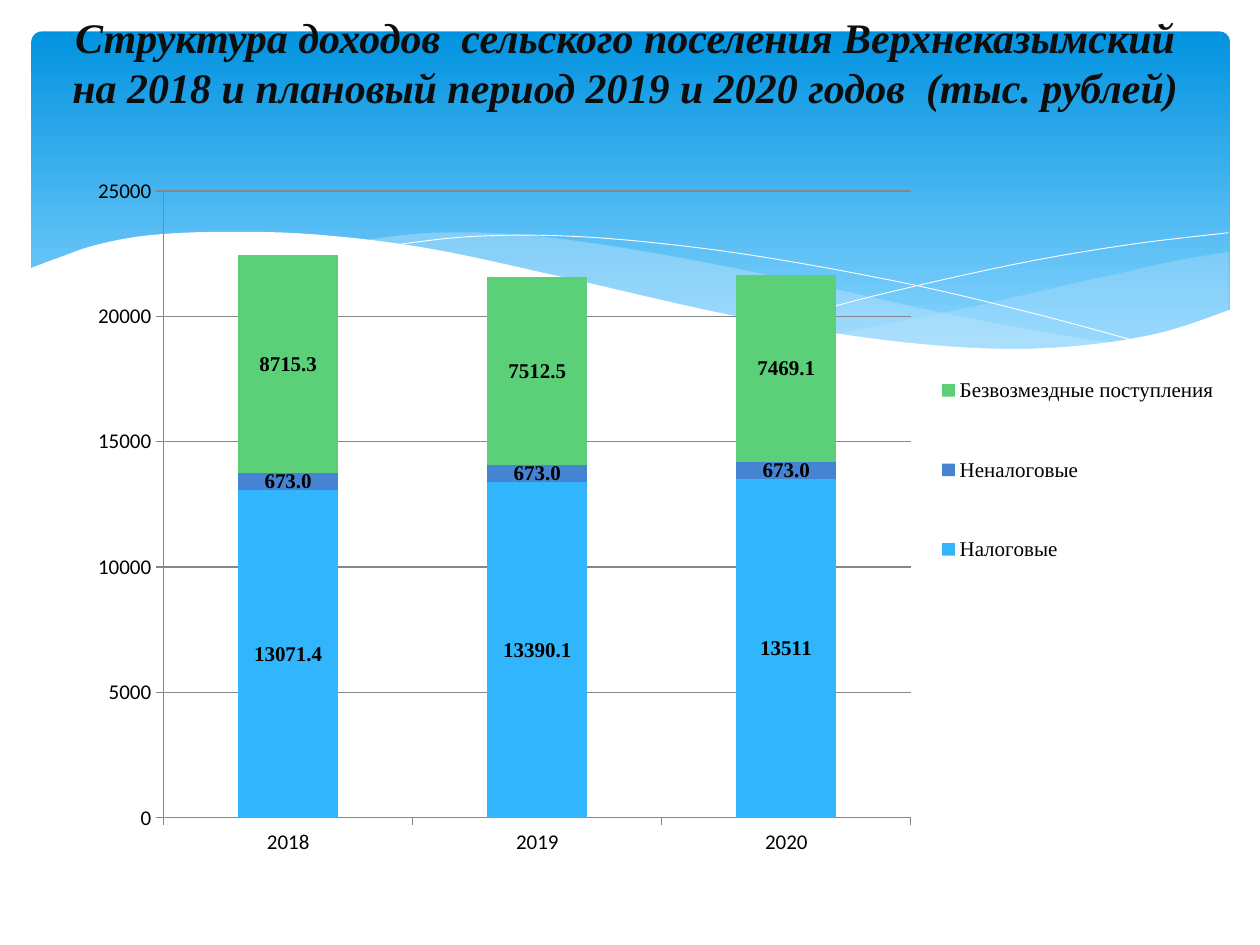
from lxml import etree
from pptx import Presentation
from pptx.chart.data import CategoryChartData
from pptx.dml.color import RGBColor
from pptx.enum.chart import XL_CHART_TYPE, XL_LEGEND_POSITION, XL_TICK_MARK
from pptx.enum.shapes import MSO_SHAPE
from pptx.enum.text import MSO_ANCHOR, MSO_AUTO_SIZE, PP_ALIGN
from pptx.oxml.ns import qn
from pptx.util import Pt

STACKED = XL_CHART_TYPE.COLUMN_STACKED
LEGEND_RIGHT = XL_LEGEND_POSITION.RIGHT
TICK_CROSS = XL_TICK_MARK.CROSS
TICK_OUTSIDE = XL_TICK_MARK.OUTSIDE
ROUNDED = MSO_SHAPE.ROUNDED_RECTANGLE
MIDDLE = MSO_ANCHOR.MIDDLE
CENTER = PP_ALIGN.CENTER
NO_AUTOSIZE = MSO_AUTO_SIZE.NONE

WHITE = RGBColor(0xFF, 0xFF, 0xFF)
BLACK = RGBColor(0, 0, 0)
TITLE_COLOR = RGBColor(0x0D, 0x0D, 0x0D)
BAND_TOP = RGBColor(0x02, 0x93, 0xE0)
BAND_BOTTOM = RGBColor(0x83, 0xD3, 0xFE)
WAVE_BLUE = RGBColor(0xC6, 0xE7, 0xFC)
GRID_GRAY = RGBColor(0x86, 0x86, 0x86)
SERIF, SANS = "Times New Roman", "Calibri"

# Content
TITLE = ("Структура доходов  сельского поселения Верхнеказымский "
         "на 2018 и плановый период 2019 и 2020 годов  (тыс. рублей)")
YEARS = ["2018", "2019", "2020"]
SERIES = [  # name, values, colour, label format
    ("Налоговые", (13071.4, 13390.1, 13511), RGBColor(0x31, 0xB6, 0xFD), "General"),
    ("Неналоговые", (673, 673, 673), RGBColor(0x45, 0x84, 0xD3), "0.0"),
    ("Безвозмездные поступления", (8715.3, 7512.5, 7469.1),
     RGBColor(0x5B, 0xD0, 0x78), "General"),
]
TITLE_FONT = {"name": SERIF, "size": Pt(24), "bold": True, "italic": True}
AXIS_FONT = {"name": SANS, "size": Pt(12)}
LEGEND_FONT = {"name": SERIF, "size": Pt(12)}
LABEL_FONT = {"name": SERIF, "size": Pt(12), "bold": True}

# Header waves: each is a list of smooth edges through key points
RIGHT_WAVE = [
    [(702, 144), (672, 149), (641, 156), (620, 160.5), (561, 174), (508, 185), (476, 191)],
    [(476, 191), (528, 197), (578, 200), (629, 198), (668, 191), (702, 178)],
]
MIDDLE_WAVE = [
    [(206, 137.5), (248, 133), (302, 134.5), (370, 144), (453, 160), (535, 178),
     (603, 191), (643, 196.5)],
    [(643, 196.5), (596, 200), (539, 198.5), (479, 191.5), (408, 178.5), (323, 160),
     (260, 146), (206, 137.5)],
]
FALLING_LINE = [[(222, 140.5), (264, 135.5), (312, 134.5), (367, 138), (437, 147),
                 (523, 163), (598, 181), (653, 196)]]
RISING_LINE = [[(441, 185), (500, 169), (580, 151), (644, 140), (702, 133)]]
WHITE_WAVE = [
    [(703, 177), (662, 190.5), (612, 198), (560, 199), (495, 193), (417, 180),
     (322, 158.5), (245, 142), (180, 134), (127, 132.5), (85, 134.5), (55, 140),
     (33, 147.5), (17, 153.5)],
    [(17, 237), (703, 237)],
]
WAVES = [  # edges, fill, opacity in percent (no fill: white hairline)
    (RIGHT_WAVE, WAVE_BLUE, 29),
    (MIDDLE_WAVE, WAVE_BLUE, 40),
    (FALLING_LINE, None, 100),
    (RISING_LINE, None, 100),
    (WHITE_WAVE, WHITE, 100),
]


def set_font(font, values, color):
    for key, value in values.items():
        setattr(font, key, value)
    font.color.rgb = color


def smooth(points, steps=6):
    """Catmull-Rom curve through the points; two points stay a straight edge."""
    if len(points) < 3:
        return points
    padded = [points[0], *points, points[-1]]
    curve = [points[0]]
    for a, b, c, d in zip(padded, padded[1:], padded[2:], padded[3:]):
        for step in range(1, steps + 1):
            t = step / steps
            curve.append(tuple(
                (2 * q + (r - p) * t + (2 * p - 5 * q + 4 * r - s) * t ** 2
                 + (3 * q - p - 3 * r + s) * t ** 3) / 2
                for p, q, r, s in zip(a, b, c, d)))
    return curve


def add_wave(shapes, edges, fill, opacity):
    points = [(Pt(x), Pt(y)) for edge in edges for x, y in smooth(edge)]
    builder = shapes.build_freeform(*points[0])
    builder.add_line_segments(points[1:], close=fill is not None)
    shape = builder.convert_to_shape()
    shape.shadow.inherit = False
    if fill is None:
        shape.fill.background()
        shape.line.color.rgb = WHITE
        shape.line.width = Pt(0.5)
        return
    shape.line.fill.background()
    shape.fill.solid()
    shape.fill.fore_color.rgb = fill
    if opacity < 100:
        color = shape._element.spPr.find(qn("a:solidFill"))[0]
        etree.SubElement(color, qn("a:alpha")).set("val", str(opacity * 1000))


def make_layout(inner=False, **box):
    layout = etree.Element(qn("c:layout"))
    manual = etree.SubElement(layout, qn("c:manualLayout"))
    values = {"layoutTarget": "inner"} if inner else {}
    values.update(xMode="edge", yMode="edge", **box)
    for key, value in values.items():
        etree.SubElement(manual, qn("c:" + key)).set("val", str(value))
    return layout


def add_header(shapes):
    band = shapes.add_shape(ROUNDED, Pt(18), Pt(18), Pt(684.7), Pt(194.4))
    band.adjustments[0] = 0.03
    band.shadow.inherit = False
    band.line.fill.background()
    band.fill.gradient()
    band.fill.gradient_angle = 270
    stops = zip(band.fill.gradient_stops, (0, 0.9), (BAND_TOP, BAND_BOTTOM))
    for stop, position, color in stops:
        stop.position = position
        stop.color.rgb = color
    for wave in WAVES:
        add_wave(shapes, *wave)


def add_title(shapes):
    title = shapes.title
    title.left, title.top, title.width, title.height = Pt(31), Pt(15), Pt(652.5), Pt(67.7)
    frame = title.text_frame
    frame.text = TITLE
    frame.auto_size = NO_AUTOSIZE
    frame.word_wrap = True
    frame.vertical_anchor = MIDDLE
    frame.margin_bottom = Pt(31)  # lifts the two lines towards the slide edge
    paragraph = frame.paragraphs[0]
    paragraph.alignment = CENTER
    set_font(paragraph.runs[0].font, TITLE_FONT, TITLE_COLOR)
    shapes._spTree.append(title._element)  # bring in front of the header


def add_income_chart(shapes):
    data = CategoryChartData()
    data.categories = YEARS
    for name, values, _, _ in SERIES:
        data.add_series(name, values)
    chart = shapes.add_chart(STACKED, Pt(42.5), Pt(94.3), Pt(663), Pt(402.5), data).chart
    chart.has_title = False
    set_font(chart.font, AXIS_FONT, BLACK)

    # Columns and labels
    plot = chart.plots[0]
    plot.gap_width, plot.overlap, plot.vary_by_categories = 150, 100, False
    for series, (_, _, color, number_format) in zip(plot.series, SERIES):
        series.format.fill.solid()
        series.format.fill.fore_color.rgb = color
        labels = series.data_labels
        labels.show_value = True
        labels.number_format = number_format
        labels.number_format_is_linked = False
        set_font(labels.font, LABEL_FONT, BLACK)

    # Axes
    value_axis = chart.value_axis
    value_axis.minimum_scale, value_axis.maximum_scale = 0, 25000
    value_axis.major_unit = 5000
    value_axis.has_major_gridlines = True
    value_axis.major_gridlines.format.line.color.rgb = GRID_GRAY
    for axis in (value_axis, chart.category_axis):
        axis.major_tick_mark = TICK_OUTSIDE
        axis.format.line.color.rgb = GRID_GRAY

    # Legend and plot area placement, as fractions of the chart
    chart.has_legend = True
    legend = chart.legend
    legend.position = LEGEND_RIGHT
    legend.include_in_layout = False
    set_font(legend.font, LEGEND_FONT, BLACK)
    for element, layout in (
        (chart._chartSpace.chart.plotArea, make_layout(True, x=0.077, y=0.037, w=0.644, h=0.89)),
        (legend._element, make_layout(x=0.735, y=0.223, w=0.26, h=0.42)),
    ):
        for old in element.findall(qn("c:layout")):
            element.remove(old)
        position = element.find(qn("c:legendPos"))
        element.insert(0 if position is None else 1, layout)


def main():
    presentation = Presentation()
    presentation.slide_width, presentation.slide_height = Pt(720), Pt(540)
    slide = presentation.slides.add_slide(presentation.slide_layouts[5])
    add_header(slide.shapes)
    add_title(slide.shapes)
    add_income_chart(slide.shapes)
    presentation.save("out.pptx")


if __name__ == "__main__":
    main()
